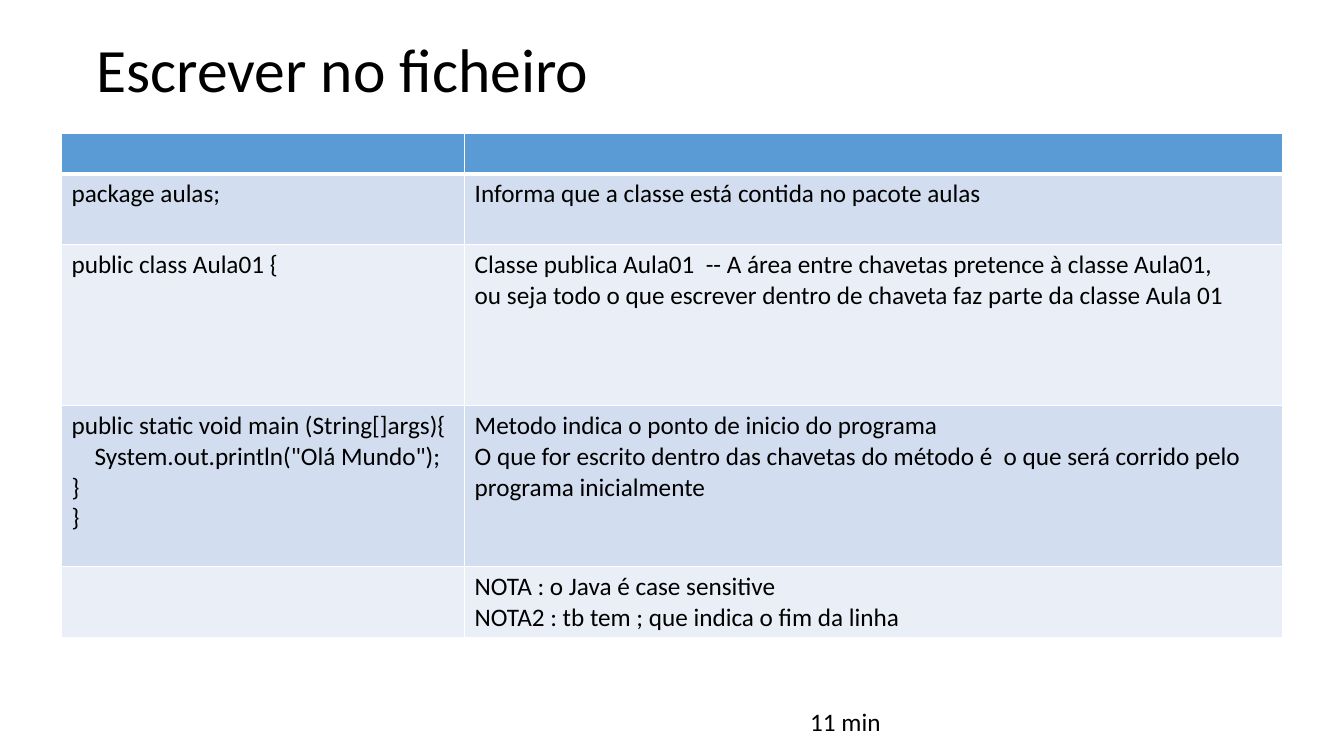
from dataclasses import dataclass

from lxml.etree import SubElement
from pptx import Presentation
from pptx.dml.color import RGBColor as RGB
from pptx.enum.text import MSO_ANCHOR as Anchor
from pptx.oxml.ns import qn
from pptx.util import Cm, Pt


@dataclass(frozen=True)
class Theme:
    font: str = "Calibri"
    title_size: int = 44
    body_size: int = 18
    text: str = "000000"
    header: str = "5B9BD5"
    bands: tuple = ("D2DEEF", "EAEFF7")
    border: str = "FFFFFF"
    border_width: int = 1
    header_rule: int = 3


THEME = Theme()
INDENT = Cm(0.58)
COLUMN_WIDTHS = (10.16, 20.6)

# Row height in cm, code lines, explanation lines
ROWS = [
    (1.03, [], []),
    (1.78, ["package aulas;"],
     ["Informa que a classe está contida no pacote aulas"]),
    (4.06, ["public class Aula01 {"],
     ["Classe publica Aula01  -- A área entre chavetas pretence à classe Aula01,",
      "ou seja todo o que escrever dentro de chaveta faz parte da classe Aula 01"]),
    (4.06, ["public static void main (String[]args){",
            "\tSystem.out.println(\"Olá Mundo\");", "}", "}"],
     ["Metodo indica o ponto de inicio do programa",
      "O que for escrito dentro das chavetas do método é  o que será corrido "
      "pelo programa inicialmente"]),
    (1.78, [],
     ["NOTA : o Java é case sensitive",
      "NOTA2 : tb tem ; que indica o fim da linha"]),
]


def write_lines(tf, lines, size):
    """Write one paragraph per line; a leading tab becomes a left indent."""
    for i, line in enumerate(lines):
        p = tf.paragraphs[0] if i == 0 else tf.add_paragraph()
        p.text = line.lstrip("\t")
        if line.startswith("\t"):
            p._p.get_or_add_pPr().set("marL", str(int(INDENT)))
        for r in p.runs:
            r.font.name = THEME.font
            r.font.size = Pt(size)
            r.font.color.rgb = RGB.from_string(THEME.text)


def add_text(slide, box, text, size, wrap=True, anchor=Anchor.TOP):
    sp = slide.shapes.add_textbox(*map(Cm, box))
    tf = sp.text_frame
    tf.word_wrap = wrap
    tf.vertical_anchor = anchor
    write_lines(tf, [text], size)
    return tf


def add_title(slide, box, text):
    tf = add_text(slide, box, text, THEME.title_size, anchor=Anchor.MIDDLE)
    tf.paragraphs[0].line_spacing = 0.9


def set_borders(cell, widths):
    """Draw the left, right, top and bottom borders with widths in points."""
    tcPr = cell._tc.get_or_add_tcPr()
    for side, width in zip("LRTB", widths):
        ln = SubElement(tcPr, qn(f"a:ln{side}"), w=str(int(Pt(width))))
        fill = SubElement(ln, qn("a:solidFill"))
        SubElement(fill, qn("a:srgbClr"), val=THEME.border)


def add_code_table(slide, box, rows):
    frame = slide.shapes.add_table(len(rows), len(COLUMN_WIDTHS), *map(Cm, box))
    table = frame.table
    for column, width in zip(table.columns, COLUMN_WIDTHS):
        column.width = Cm(width)
    thin, thick = THEME.border_width, THEME.header_rule
    for i, (height, *texts) in enumerate(rows):
        table.rows[i].height = Cm(height)
        color = THEME.bands[(i - 1) % 2] if i else THEME.header
        top = thick if i == 1 else thin
        bottom = thick if i == 0 else thin
        for j, lines in enumerate(texts):
            cell = table.cell(i, j)
            set_borders(cell, (thin, thin, top, bottom))
            cell.fill.solid()
            cell.fill.fore_color.rgb = RGB.from_string(color)
            write_lines(cell.text_frame, lines, THEME.body_size)


def main():
    prs = Presentation()
    prs.slide_width, prs.slide_height = Cm(33.87), Cm(19.05)
    slide = prs.slides.add_slide(prs.slide_layouts[6])
    add_title(slide, (2.18, 0, 29.21, 3.68), "Escrever no ficheiro")
    add_text(slide, (20.17, 17.68, 2.31, 1.02), "11 min", THEME.body_size, wrap=False)
    table_height = sum(row[0] for row in ROWS)
    add_code_table(slide, (1.55, 3.35, sum(COLUMN_WIDTHS), table_height), ROWS)
    prs.save("out.pptx")


if __name__ == "__main__":
    main()
